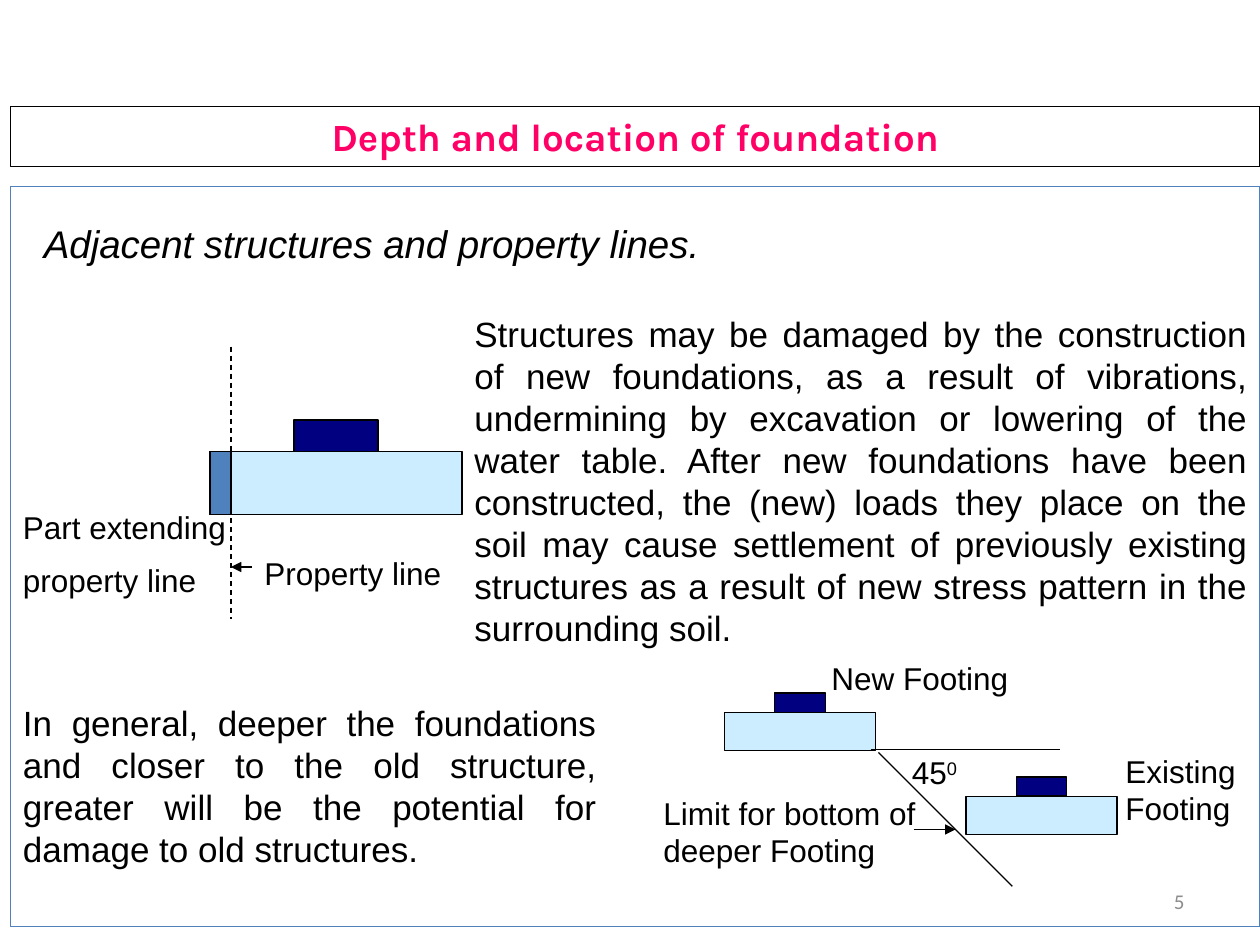
"""Build the slide on depth and location of foundations."""
from lxml import etree
from pptx import Presentation
from pptx.dml.color import RGBColor
from pptx.enum import dml, shapes, text
from pptx.oxml import ns
from pptx.util import Pt

BLACK = RGBColor(0x00, 0x00, 0x00)
PINK = RGBColor(0xFF, 0x00, 0x66)
GREY = RGBColor(0x8C, 0x8C, 0x8C)
BLUE = RGBColor(0x4F, 0x81, 0xBD)
PALE = RGBColor(0xCC, 0xEC, 0xFF)
NAVY = RGBColor(0x00, 0x00, 0x80)
LEFT, CENTER = text.PP_ALIGN.LEFT, text.PP_ALIGN.CENTER
RIGHT, JUSTIFY = text.PP_ALIGN.RIGHT, text.PP_ALIGN.JUSTIFY


def write(sp, lines, size=18, font="Arial", color=BLACK, bold=False,
          italic=False, align=LEFT, anchor=text.MSO_ANCHOR.TOP, sup=""):
    tf = sp.text_frame
    tf.word_wrap = True
    tf.auto_size = text.MSO_AUTO_SIZE.NONE
    tf.vertical_anchor = anchor
    for i, line in enumerate(lines.split("\n")):
        p = tf.add_paragraph() if i else tf.paragraphs[0]
        p.alignment = align
        p.space_before = Pt(9 if i else 0)
        for part in filter(None, (line, sup)):
            r = p.add_run()
            r.text = part
            r.font.size, r.font.name = Pt(size), font
            r.font.bold, r.font.italic = bold, italic
            r.font.color.rgb = color
            if part == sup:
                r.font._element.set("baseline", "30000")


def add_rect(x, y, w, h, fill=None, line=BLACK):
    sp = s.shapes.add_shape(shapes.MSO_SHAPE.RECTANGLE, Pt(x), Pt(y), Pt(w), Pt(h))
    sp.shadow.inherit = False
    if fill is None:
        sp.fill.background()
    else:
        sp.fill.solid()
        sp.fill.fore_color.rgb = fill
    sp.line.color.rgb = line
    sp.line.width = Pt(0.75)


prs = Presentation()
prs.slide_width, prs.slide_height = Pt(720), Pt(540)
s = prs.slides.add_slide(prs.slide_layouts[5])

title = s.shapes.title
title.left, title.top, title.width, title.height = Pt(6), Pt(61), Pt(714), Pt(34)
title.line.color.rgb = BLACK
title.line.width = Pt(0.75)
write(title, "Depth and location of foundation", size=22, font="Karla",
      color=PINK, bold=True, align=CENTER, anchor=text.MSO_ANCHOR.MIDDLE)

footings = [(120, 258, 144, 36, 168, 48, 18),
            (414, 407, 86.4, 22, 442.8, 28.8, 11),
            (552, 455, 86.4, 22, 580.8, 28.8, 11)]
for x, y, w, h, column_x, column_w, column_h in footings:
    add_rect(x, y, w, h, PALE)
    add_rect(column_x, y - column_h, column_w, column_h, NAVY)
add_rect(120, 258, 12, 36, BLUE)

lines = [((497.5, 428.4), (605.5, 428.4), False, False),
         ((502, 430), (578.5, 506.5), False, False),
         ((522, 474), (546, 474), False, True),
         ((132, 198), (132, 354), True, False),
         ((144, 324), (132, 324), False, True)]
for start, end, dashed, arrow in lines:
    cx = s.shapes.add_connector(shapes.MSO_CONNECTOR.STRAIGHT, *map(Pt, start + end))
    cx.line.color.rgb = BLACK
    cx.line.width = Pt(0.75)
    if dashed:
        cx.line.dash_style = dml.MSO_LINE.DASH
    if arrow:
        etree.SubElement(cx.line._get_or_add_ln(), ns.qn("a:tailEnd"), type="triangle")
    etree.SubElement(cx._element.spPr, ns.qn("a:effectLst"))

texts = [
    (18, 122, 690, 36, "Adjacent structures and property lines.",
     dict(size=22, italic=True, align=JUSTIFY)),
    (264, 175, 456, 200,
     "Structures may be damaged by the construction of new foundations, as a result "
     "of vibrations, undermining by excavation or lowering of the water table. After "
     "new foundations have been constructed, the (new) loads they place on the soil "
     "may cause settlement of previously existing structures as a result of new "
     "stress pattern in the surrounding soil.", dict(size=20, align=JUSTIFY)),
    (6, 397.5, 342, 104,
     "In general, deeper the foundations and closer to the old structure, greater "
     "will be the potential for damage to old structures.",
     dict(size=20, align=JUSTIFY)),
    (514, 427, 60, 29, "45", dict(sup="0")),
    (636, 426, 84, 50, "Existing Footing", {}),
    (468, 373, 126, 29, "New Footing", {}),
    (372, 450, 162, 50, "Limit for bottom of deeper Footing", {}),
    (6, 286.5, 162, 61, "Part extending\nproperty line", {}),
    (144, 313, 162, 29, "Property line", {}),
    (516, 500.5, 168, 29, "5", dict(size=12, font="Calibri", color=GREY, align=RIGHT,
                                    anchor=text.MSO_ANCHOR.MIDDLE)),
]
for x, y, w, h, words, style in texts:
    write(s.shapes.add_textbox(Pt(x), Pt(y), Pt(w), Pt(h)), words, **style)

add_rect(6, 106.5, 714, 423, line=BLUE)

prs.save("out.pptx")
